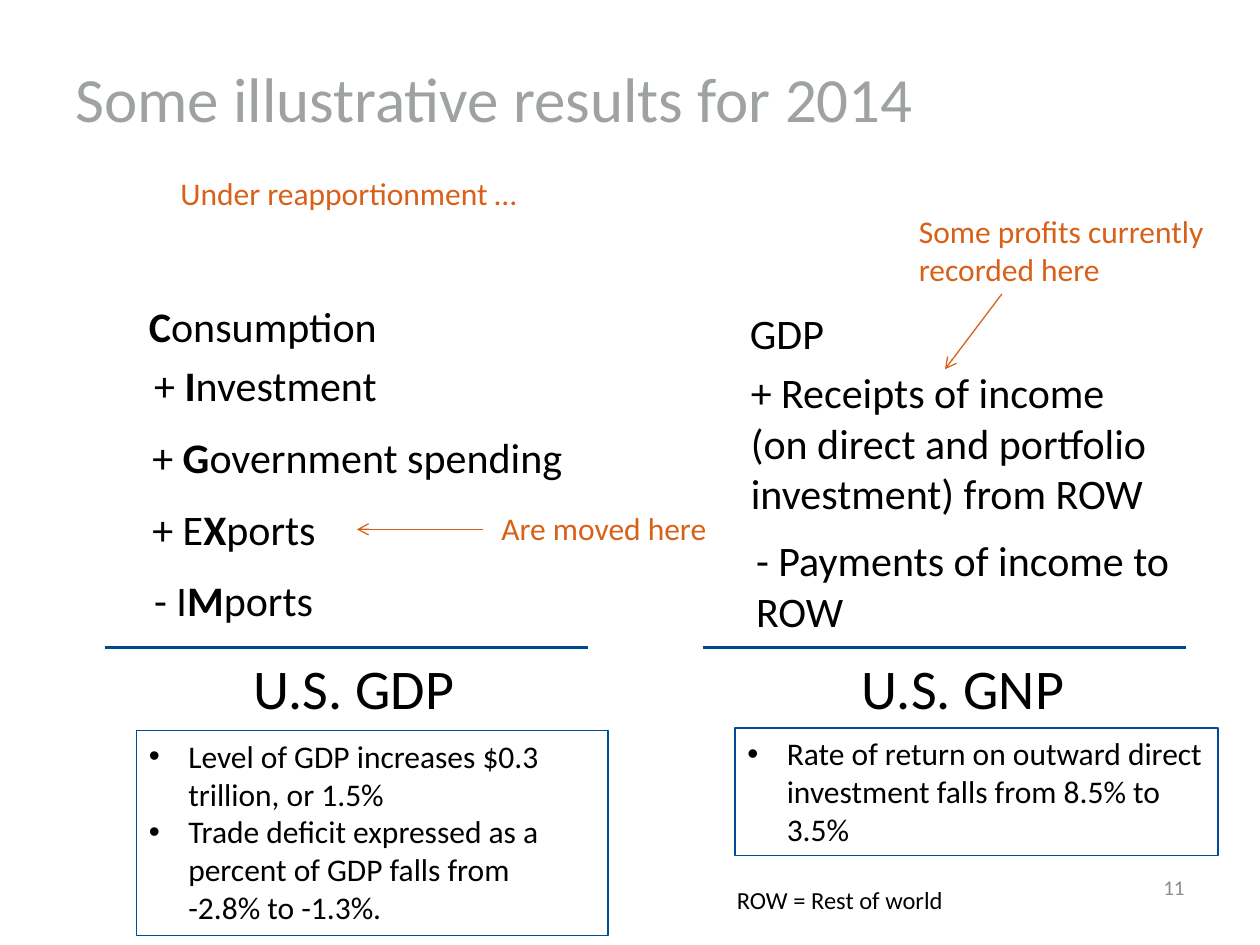
from collections import namedtuple

from lxml import etree
from pptx import Presentation
from pptx.dml.color import RGBColor
from pptx.enum.shapes import MSO_CONNECTOR, MSO_SHAPE
from pptx.enum.text import MSO_ANCHOR, PP_ALIGN
from pptx.oxml.ns import qn
from pptx.util import Pt

BLACK = RGBColor(0x00, 0x00, 0x00)
TITLE_GRAY = RGBColor(0x9E, 0xA2, 0xA2)
NUMBER_GRAY = RGBColor(0x8C, 0x8C, 0x8C)
ORANGE = RGBColor(0xD8, 0x60, 0x18)
RULE_BLUE = RGBColor(0x00, 0x4A, 0x94)
BORDER_BLUE = RGBColor(0x00, 0x4C, 0x97)
STRAIGHT = MSO_CONNECTOR.STRAIGHT
RECTANGLE = MSO_SHAPE.RECTANGLE
MIDDLE = MSO_ANCHOR.MIDDLE
TOP = MSO_ANCHOR.TOP
LEFT = PP_ALIGN.LEFT
RIGHT = PP_ALIGN.RIGHT
FONT = "Calibri"
RULE_OFFSET = 202
COLUMN_WIDTH = 276

Box = namedtuple("Box", "left top width height")


def inside(box, left, top, width, height):
    return Box(box.left + left, box.top + top, width, height)


def add_run(paragraph, text, size, color, bold=False):
    run = paragraph.add_run()
    run.text = text
    run.font.name = FONT
    run.font.size = Pt(size)
    run.font.bold = bold
    run.font.color.rgb = color


def add_text(slide, box, runs, size, color=BLACK, anchor=TOP, alignment=LEFT):
    shape = slide.shapes.add_textbox(*map(Pt, box))
    frame = shape.text_frame
    frame.word_wrap = True
    frame.vertical_anchor = anchor
    paragraph = frame.paragraphs[0]
    paragraph.alignment = alignment
    for text, bold in runs:
        add_run(paragraph, text, size, color, bold)
    return shape


def add_line(slide, start, end, color, width, arrow=False):
    connector = slide.shapes.add_connector(STRAIGHT, *map(Pt, start + end))
    connector.line.color.rgb = color
    connector.line.width = Pt(width)
    if arrow:
        line = connector.line._get_or_add_ln()
        etree.SubElement(line, qn("a:tailEnd"), type="arrow")
    etree.SubElement(connector._element.spPr, qn("a:effectLst"))


def add_findings(slide, box, findings):
    shape = slide.shapes.add_shape(RECTANGLE, *map(Pt, box))
    shape.shadow.inherit = False
    shape.fill.background()
    shape.line.color.rgb = BORDER_BLUE
    shape.line.width = Pt(0.75)
    frame = shape.text_frame
    frame.word_wrap = True
    frame.vertical_anchor = TOP
    for index, lines in enumerate(findings):
        paragraph = frame.add_paragraph() if index else frame.paragraphs[0]
        paragraph.alignment = LEFT
        properties = paragraph._p.get_or_add_pPr()
        properties.set("marL", str(Pt(22.5)))
        properties.set("indent", str(Pt(-22.5)))
        etree.SubElement(properties, qn("a:buFont"), typeface="Arial")
        etree.SubElement(properties, qn("a:buChar"), char="•")
        for number, line in enumerate(lines):
            if number:
                paragraph.add_line_break()
            add_run(paragraph, line, 18, BLACK)


def add_account(slide, box, entries, total, total_left, findings, findings_box):
    for left, top, width, height, runs in entries:
        add_text(slide, inside(box, left, top, width, height), runs, 24)
    rule_top = box.top + RULE_OFFSET
    add_line(slide, (box.left, rule_top), (box.left + box.width, rule_top), RULE_BLUE, 2)
    add_text(slide, inside(box, total_left, RULE_OFFSET, 141, 46), [(total, False)], 32)
    add_findings(slide, inside(box, *findings_box), findings)


def add_gdp(slide, box):
    terms = [
        (18, 0, [("C", True), ("onsumption", False)]),
        (21, 34, [("+ ", False), ("I", True), ("nvestment", False)]),
        (20, 75, [("+ ", False), ("G", True), ("overnment spending", False)]),
        (20, 116, [("+ E", False), ("X", True), ("ports", False)]),
        (21, 157, [("- I", False), ("M", True), ("ports", False)]),
    ]
    entries = [(left, top, 268, 36, runs) for left, top, runs in terms]
    findings = [
        ["Level of GDP increases $0.3 trillion, or 1.5%"],
        ["Trade deficit expressed as a percent of GDP falls from", "-2.8% to -1.3%."],
    ]
    add_account(slide, box, entries, "U.S. GDP", 78, findings, (18, 249.5, 269.5, 117))


def add_gnp(slide, box):
    entries = [
        (20, 4, 186, 36, [("GDP", False)]),
        (20.5, 38, 252, 94, [("+ Receipts of income (on direct and portfolio investment) from ROW", False)]),
        (23.5, 134, 252, 66, [("- Payments of income to ROW", False)]),
    ]
    findings = [["Rate of return on outward direct investment falls from 8.5% to 3.5%"]]
    add_account(slide, box, entries, "U.S. GNP", 84, findings, (18.5, 248, 276, 73))


def add_annotations(slide, box):
    notes = [
        (0, 0, 336, 29, "Under reapportionment …"),
        (422, 21.5, 184.5, 51, "Some profits currently recorded here"),
        (183.5, 191.5, 138, 29, "Are moved here"),
    ]
    for left, top, width, height, text in notes:
        add_text(slide, inside(box, left, top, width, height), [(text, False)], 18, ORANGE)
    for start, end in [((476.5, 72), (444, 115)), ((180, 206.5), (108, 206.5))]:
        points = [(box.left + left, box.top + top) for left, top in (start, end)]
        add_line(slide, *points, ORANGE, 0.75, arrow=True)


def add_title(slide, box):
    title = add_text(slide, box, [("Some illustrative results for 2014", False)], 36, TITLE_GRAY, MIDDLE)
    title.text_frame.margin_bottom = Pt(0)


def add_footer(slide, box):
    add_text(slide, inside(box, 0, 3, 288, 24), [("ROW = Rest of world", False)], 14)
    add_text(slide, inside(box, 228, 0, 42, 16), [("11", False)], 12, NUMBER_GRAY, MIDDLE, RIGHT)


def main():
    presentation = Presentation()
    presentation.slide_width = Pt(720)
    presentation.slide_height = Pt(540)
    slide = presentation.slides.add_slide(presentation.slide_layouts[6])
    add_title(slide, Box(36, 18, 540, 72))
    add_gdp(slide, Box(60, 168, COLUMN_WIDTH, 366))
    add_gnp(slide, Box(401.5, 168, COLUMN_WIDTH, 321))
    add_annotations(slide, Box(96, 96, 606, 221))
    add_footer(slide, Box(414, 499, 288, 27))
    presentation.save("out.pptx")


if __name__ == "__main__":
    main()
